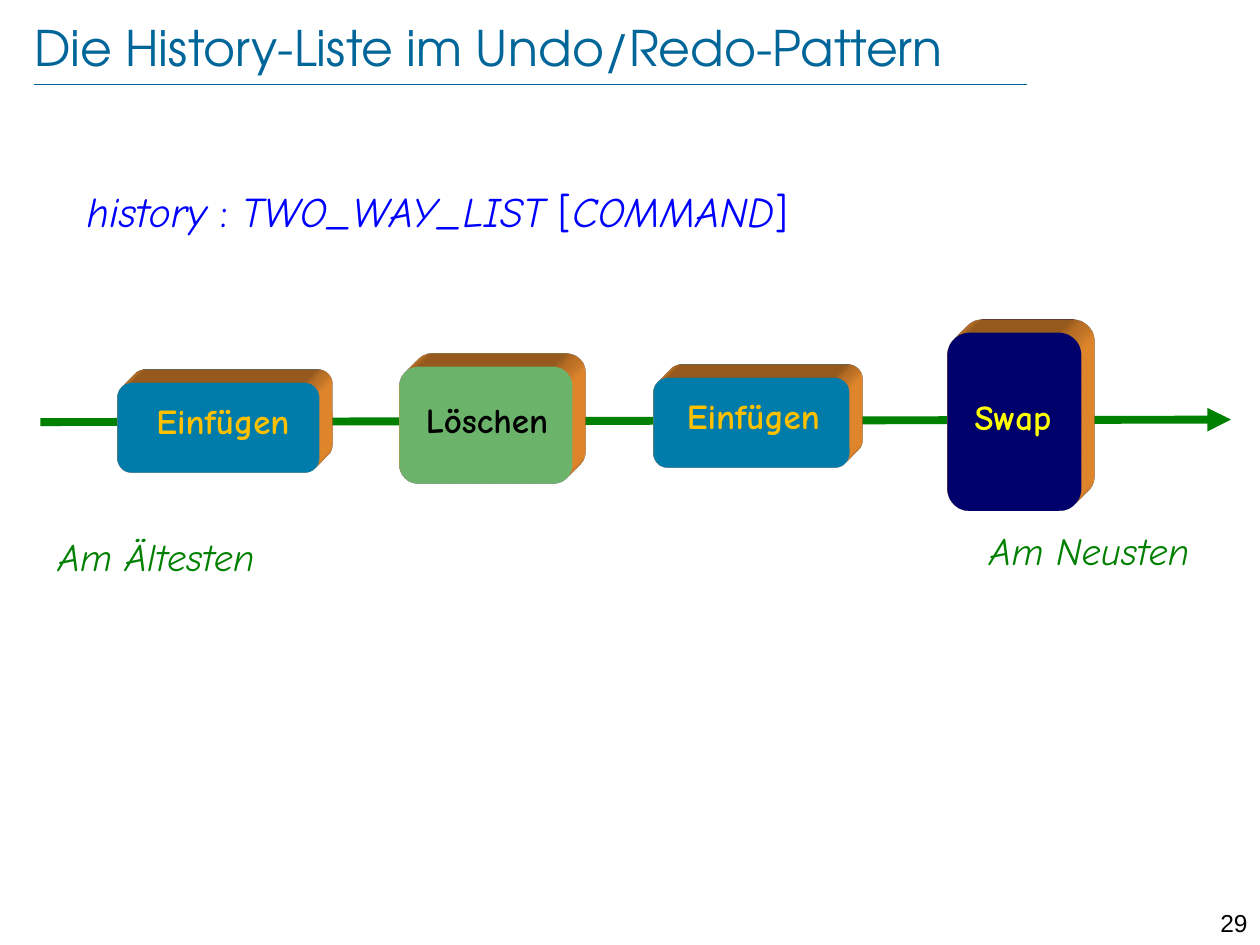
"""Build the slide on the history list in the undo/redo pattern."""
import pptx
import pptx.dml.color
import pptx.enum.shapes
import pptx.enum.text
import pptx.oxml
import pptx.oxml.ns
import pptx.util

RGBColor = pptx.dml.color.RGBColor
Pt = pptx.util.Pt
PP_ALIGN = pptx.enum.text.PP_ALIGN
MSO_SHAPE = pptx.enum.shapes.MSO_SHAPE

TEAL = RGBColor(0x00, 0x66, 0x99)
BLUE = RGBColor(0x00, 0x00, 0xFF)
GREEN = RGBColor(0x00, 0x80, 0x00)
SKY = RGBColor(0x00, 0xB0, 0xF0)
NAVY = RGBColor(0x00, 0x00, 0x99)
MINT = RGBColor(0x99, 0xFF, 0x99)
GOLD = RGBColor(0xFF, 0xC0, 0x00)
YELLOW = RGBColor(0xFF, 0xFF, 0x00)
BLACK = RGBColor(0x00, 0x00, 0x00)
ORANGE = RGBColor(0xFF, 0x99, 0x33)

HAND = "Comic Neue"
NS = pptx.oxml.ns.nsdecls("a")
SCENE = (
    f'<a:scene3d {NS}><a:camera prst="legacyObliqueTopRight"/>'
    '<a:lightRig rig="legacyFlat3" dir="b"/></a:scene3d>'
)
DEPTH = (
    f'<a:sp3d {NS} extrusionH="274320" prstMaterial="legacyMatte">'
    '<a:bevelT w="13500" h="13500" prst="angle"/>'
    '<a:bevelB w="13500" h="13500" prst="angle"/>'
    f'<a:extrusionClr><a:srgbClr val="{ORANGE}"/></a:extrusionClr></a:sp3d>'
)

deck = pptx.Presentation()
deck.slide_width = pptx.util.Inches(10)
deck.slide_height = pptx.util.Inches(7.5)
COLUMN = deck.slide_width // 100
ROW = deck.slide_height // 75

slide = deck.slides.add_slide(deck.slide_layouts[5])


def cells(*lengths):
    """Turn alternating column and row counts into slide lengths."""
    return [round(n * unit) for n, unit in zip(lengths, (COLUMN, ROW) * 2)]


def add_text(place, runs, size, color, align=PP_ALIGN.CENTER, face=HAND, bold=False):
    """Add a one-paragraph text box from (text, italic) runs."""
    box = slide.shapes.add_textbox(*cells(*place))
    box.text_frame.word_wrap = True
    paragraph = box.text_frame.paragraphs[0]
    paragraph.alignment = align
    paragraph.font.name = face
    paragraph.font.size = Pt(size)
    paragraph.font.bold = bold
    paragraph.font.color.rgb = color
    for words, italic in runs:
        run = paragraph.add_run()
        run.text = words
        run.font.italic = italic


heading = slide.shapes.title
heading.left, heading.top, heading.width, heading.height = cells(2.7, 1.3, 86.9, 4.8)
frame = heading.text_frame
frame.text = "Die History-Liste im Undo/Redo-Pattern"
frame.margin_left = frame.margin_top = frame.margin_right = frame.margin_bottom = 0
frame.vertical_anchor = pptx.enum.text.MSO_ANCHOR.MIDDLE
frame.paragraphs[0].alignment = PP_ALIGN.LEFT
frame.paragraphs[0].font.name = "TeX Gyre Adventor"
frame.paragraphs[0].font.size = Pt(28)
frame.paragraphs[0].font.color.rgb = TEAL

for start, end, color, weight, arrow in (
    ((2.7, 6.7), (81.5, 6.7), TEAL, 0.25, False),
    ((3.2, 33.5), (97.7, 33.3), GREEN, 4.5, True),
):
    line = slide.shapes.add_connector(
        pptx.enum.shapes.MSO_CONNECTOR.STRAIGHT, *cells(*start, *end)
    )
    line.line.color.rgb = color
    line.line.width = Pt(weight)
    if arrow:
        line.line._get_or_add_ln().append(
            pptx.oxml.parse_xml(f'<a:tailEnd {NS} type="triangle"/>')
        )
    line._element.spPr.append(pptx.oxml.parse_xml(f"<a:effectLst {NS}/>"))

declaration = (
    ("history ", True),
    (": ", False),
    ("TWO_WAY_LIST ", True),
    ("[", False),
    ("COMMAND", True),
    ("]", False),
)
add_text((5.9, 14.2, 91.7, 5), declaration, 24, BLUE, PP_ALIGN.LEFT)
add_text((1.6, 41.8, 21.6, 4.7), [("Am Ältesten", True)], 22, GREEN)
add_text((72.3, 41.3, 28.3, 4.7), [("Am Neusten", True)], 22, GREEN)

for command, block, label, fill, ink in (
    ("Einfügen", (9.3, 30.4, 16, 7.1), (9.2, 31.2, 17, 4.8), SKY, GOLD),
    ("Löschen", (31.7, 29.1, 13.7, 9.3), (30.9, 31.1, 15.5, 4.4), MINT, BLACK),
    ("Einfügen", (51.9, 30, 15.5, 7.1), (51.3, 30.8, 17, 4.8), SKY, GOLD),
    ("Swap", (75.2, 26.4, 10.6, 14.1), (74.2, 30.9, 12.4, 4.4), NAVY, YELLOW),
):
    brick = slide.shapes.add_shape(MSO_SHAPE.ROUNDED_RECTANGLE, *cells(*block))
    brick.fill.solid()
    brick.fill.fore_color.rgb = fill
    brick.line.fill.background()
    brick.shadow.inherit = False
    for effect in (SCENE, DEPTH):
        brick._element.spPr.append(pptx.oxml.parse_xml(effect))
    add_text(label, [(command, False)], 20, ink, bold=True)

add_text((94.5, 71.6, 5.5, 2.4), [("29", False)], 14, BLACK, PP_ALIGN.RIGHT, "Arial")

deck.save("out.pptx")
